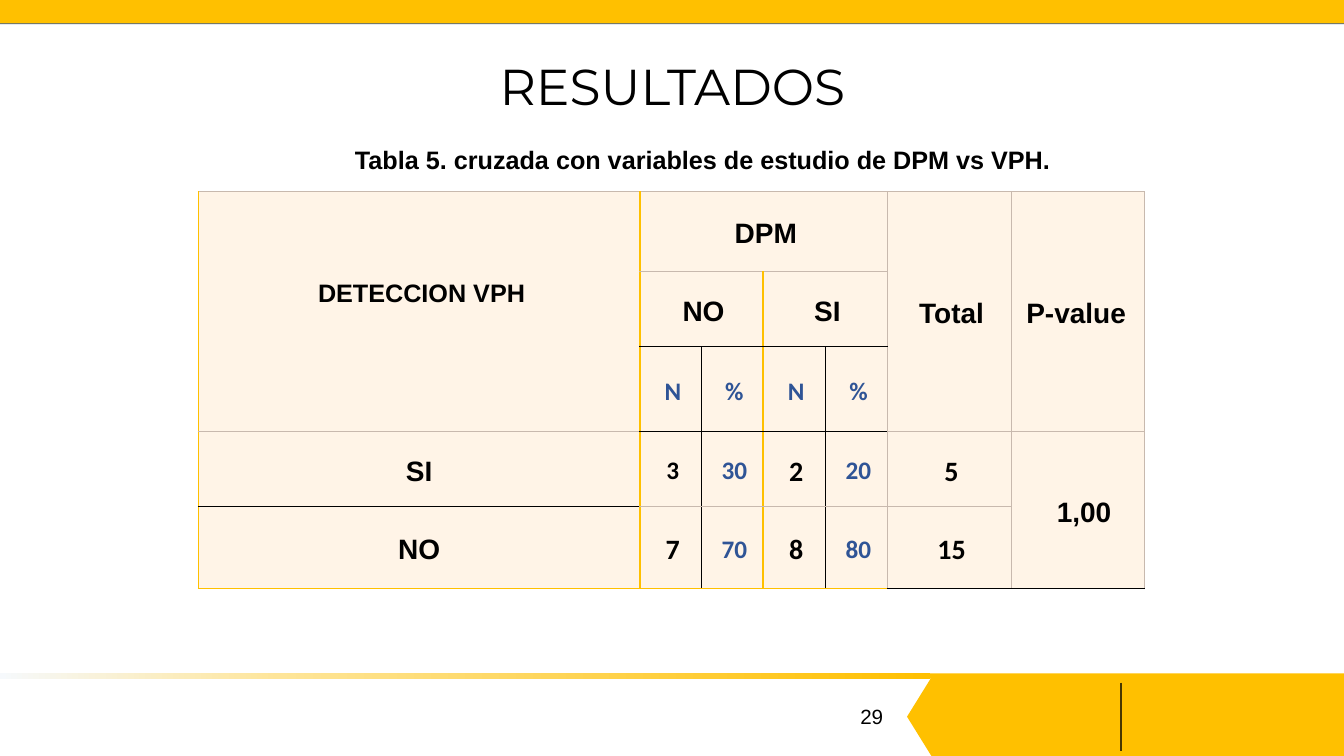
"""Builds the results slide with the DPM against VPH cross table."""
import pptx
import pptx.dml.color
import pptx.enum.shapes
import pptx.enum.text
import pptx.oxml
import pptx.oxml.ns
import pptx.util
from lxml import etree

Cm, Pt = pptx.util.Cm, pptx.util.Pt
SHAPE = pptx.enum.shapes.MSO_SHAPE
MIDDLE = pptx.enum.text.MSO_ANCHOR.MIDDLE
qn = pptx.oxml.ns.qn
YELLOW, BLUE, BLACK, CREAM, GREY = "FFC000", "2F5496", "000000", "FFF4E7", "C8B9AE"


def rgb(value):
    return pptx.dml.color.RGBColor.from_string(value)


def write(tf, text, size, font="Arial", color=BLACK, bold=False, spacing=None):
    tf.word_wrap = True
    p = tf.paragraphs[0]
    p.alignment = pptx.enum.text.PP_ALIGN.CENTER
    p.line_spacing = spacing
    r = p.add_run()
    r.text = text
    r.font.size, r.font.name, r.font.bold = Pt(size), font, bold
    r.font.color.rgb = rgb(color)
    return p


prs = pptx.Presentation()
prs.slide_width, prs.slide_height = Cm(33.87), Cm(19.05)
s = prs.slides.add_slide(prs.slide_layouts[6])

bands = [
    (SHAPE.PENTAGON, 22.86, 17.07, 11.84, 1.98, YELLOW),
    (SHAPE.RECTANGLE, 23.44, 16.97, 10.43, 0.13, YELLOW),
    (SHAPE.RECTANGLE, 0, 0, 33.87, 0.61, BLUE),
    (SHAPE.RECTANGLE, 0, 0, 33.87, 0.59, YELLOW),
    (SHAPE.RECTANGLE, 0, 16.97, 23.44, 0.13, None),
]
for kind, x, y, w, h, color in bands:
    sp = s.shapes.add_shape(kind, Cm(x), Cm(y), Cm(w), Cm(h))
    sp.shadow.inherit = False
    sp.line.fill.background()
    if kind == SHAPE.PENTAGON:
        sp.adjustments[0] = 0.31
        sp._element.spPr.find(qn("a:xfrm")).set("flipH", "1")
    if color:
        sp.fill.solid()
        sp.fill.fore_color.rgb = rgb(color)
    else:
        sp.fill.gradient()
        sp.fill.gradient_angle = 0
        stops = sp._element.spPr.find(qn("a:gradFill")).find(qn("a:gsLst"))
        for stop in list(stops):
            stops.remove(stop)
        for pos, stop_color in ((0, "F6F9FC"), (30, "FEE599"), (100, YELLOW)):
            stop = etree.SubElement(stops, qn("a:gs"), pos=str(pos * 1000))
            etree.SubElement(stop, qn("a:srgbClr"), val=stop_color)

divider = s.shapes.add_connector(
    pptx.enum.shapes.MSO_CONNECTOR.STRAIGHT, Cm(28.24), Cm(17.2), Cm(28.24), Cm(18.92))
divider.line.color.rgb = rgb("483700")
divider.line.width = Pt(1.5)
etree.SubElement(divider._element.spPr, qn("a:effectLst"))

title = s.shapes.add_textbox(Cm(2.34), Cm(0.61), Cm(29.21), Cm(3.28))
title.text_frame.vertical_anchor = MIDDLE
write(title.text_frame, "RESULTADOS", 36, "Montserrat", spacing=0.9)

number = s.shapes.add_textbox(Cm(21.21), Cm(17.35), Cm(1.52), Cm(1.42))
number.text_frame.vertical_anchor = MIDDLE
write(number.text_frame, "29", 14.7)

caption = s.shapes.add_textbox(Cm(7.92), Cm(3.4), Cm(19.58), Cm(1.09))
write(caption.text_frame, "Tabla 5. cruzada con variables de estudio de DPM vs VPH.",
      18, bold=True, spacing=1.15)

col_widths = [11.13, 1.55, 1.55, 1.57, 1.57, 3.12, 3.36]
row_heights = [2.01, 1.9, 2.13, 1.9, 2.06]
rows = [
    ["DETECCION VPH", "DPM", "", "", "", "Total", "P-value"],
    ["", "NO", "", "SI", "", "", ""],
    ["", "N", "%", "N", "%", "", ""],
    ["SI", "3", "30", "2", "20", "5", "1,00"],
    ["NO", "7", "70", "8", "80", "15", ""],
]
spans = {(0, 0): (3, 1), (0, 1): (1, 4), (0, 5): (3, 1), (0, 6): (3, 1),
         (1, 1): (1, 2), (1, 3): (1, 2), (3, 6): (2, 1)}
line_colors = {"Y": YELLOW, "G": GREY, "K": BLACK}
across = ["GGGGGGG", ".GGGG..", ".KKKK..", "GKKKKGG", "KGGGGG.", "YYYYYKK"]
down = ["YY...GGG", "YY.Y.GGG"] + ["YYKYKGGG"] * 3
margins = {"DETECCION VPH": (0.3, 0.18, 1), "P-value": (0.18, 0.38, 0),
           "1,00": (0.38, 0.18, 0)}

frame = s.shapes.add_table(5, 7, Cm(5), Cm(4.83), Cm(sum(col_widths)), Cm(sum(row_heights)))
table = frame.table
table.first_row = table.horz_banding = False
for column, width in zip(table.columns, col_widths):
    column.width = Cm(width)
for row, height in zip(table.rows, row_heights):
    row.height = Cm(height)
for (i, j), (n_rows, n_cols) in spans.items():
    table.cell(i, j).merge(table.cell(i + n_rows - 1, j + n_cols - 1))

for i, row in enumerate(rows):
    for j, text in enumerate(row):
        cell = table.cell(i, j)
        n_rows, n_cols = spans.get((i, j), (1, 1))
        tc_pr = cell._tc.get_or_add_tcPr()
        edges = {"L": down[i][j], "R": down[i][j + n_cols],
                 "T": across[i][j], "B": across[i + n_rows][j]}
        for side, code in edges.items():
            ln = etree.SubElement(tc_pr, qn("a:ln" + side), w=str(Pt(1)))
            if code in line_colors:
                fill = etree.SubElement(ln, qn("a:solidFill"))
                etree.SubElement(fill, qn("a:srgbClr"), val=line_colors[code])
            else:
                etree.SubElement(ln, qn("a:noFill"))
        cell.fill.solid()
        cell.fill.fore_color.rgb = rgb(CREAM)
        cell.vertical_anchor = MIDDLE
        cell.margin_left, cell.margin_right, cell.margin_bottom = (
            Cm(m) for m in margins.get(text, (0.18, 0.18, 0)))
        cell.margin_top = 0
        if text:
            percent = j in (2, 4)
            blue = i == 2 or percent
            small = blue or text in ("DETECCION VPH", "3")
            font = "Calibri" if i >= 2 and 1 <= j <= 5 else "Arial"
            p = write(cell.text_frame, text, 18 if small else 20, font,
                      BLUE if blue else BLACK, True, 1.15)
            p.space_after = Pt(8)
            if j:
                p._p.get_or_add_pPr().set("marL", str(Cm(0.1)))

prs.save("out.pptx")
